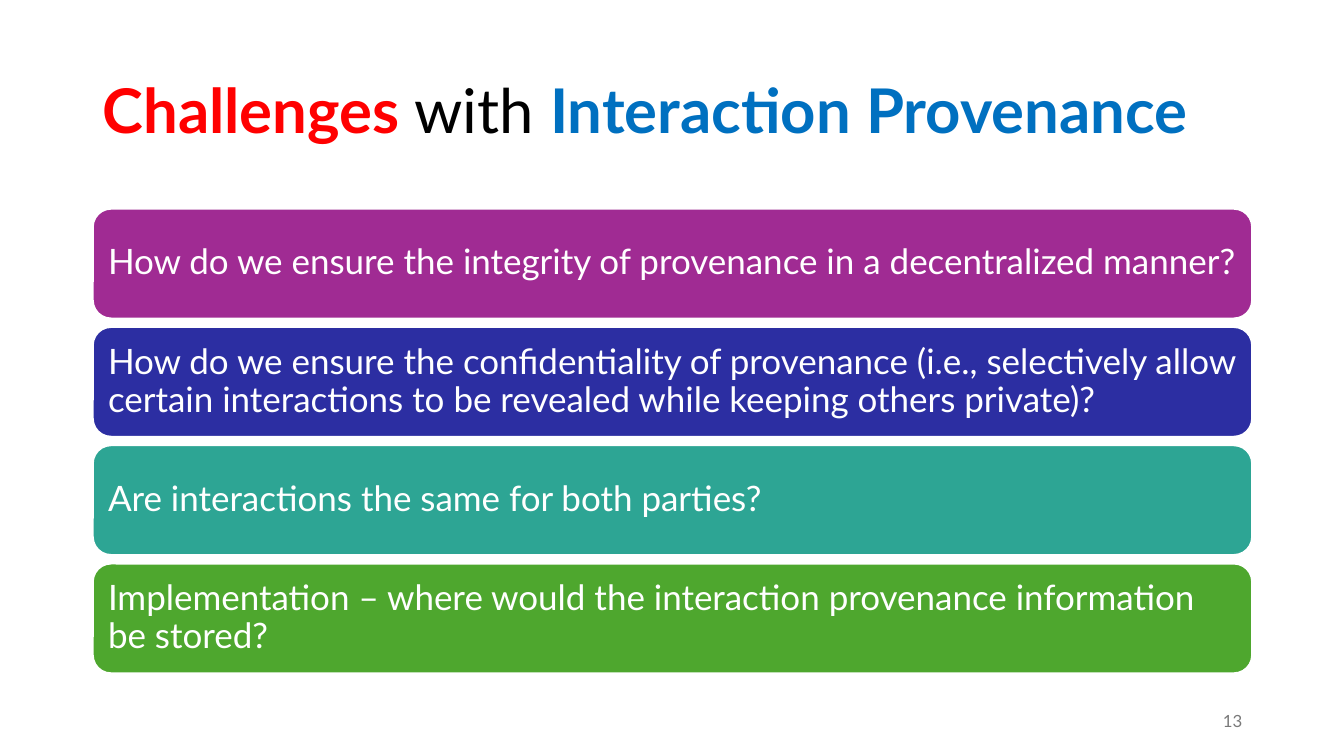
from pptx import Presentation
from pptx.dml.color import RGBColor
from pptx.enum.shapes import MSO_SHAPE
from pptx.enum.text import MSO_ANCHOR, PP_ALIGN
from pptx.util import Inches, Pt

WHITE = RGBColor(0xFF, 0xFF, 0xFF)
BLACK = RGBColor(0x00, 0x00, 0x00)
RED = RGBColor(0xFF, 0x00, 0x00)
BLUE = RGBColor(0x00, 0x70, 0xC0)
GRAY = RGBColor(0x79, 0x79, 0x79)
PURPLE = RGBColor(0xA0, 0x2B, 0x93)
INDIGO = RGBColor(0x2C, 0x2E, 0xA2)
TEAL = RGBColor(0x2D, 0xA5, 0x94)
GREEN = RGBColor(0x4E, 0xA7, 0x2E)
FONT = "Lato"

TITLE = [
    ("Challenges", RED, True),
    (" with ", BLACK, False),
    ("Interaction Provenance", BLUE, True),
]
CHALLENGES = [
    ("How do we ensure the integrity of provenance in a decentralized manner?", PURPLE),
    ("How do we ensure the confidentiality of provenance (i.e., selectively allow "
     "certain interactions to be revealed while keeping others private)?", INDIGO),
    ("Are interactions the same for both parties?", TEAL),
    ("Implementation – where would the interaction provenance information be stored?", GREEN),
]
PAGE_NUMBER = "13"

LEFT, WIDTH = 0.92, 11.5
FIRST_TOP, LAST_TOP, BAR_HEIGHT = 2.07, 5.59, 1.09
PITCH = (LAST_TOP - FIRST_TOP) / (len(CHALLENGES) - 1)


def prepare_text(box, size):
    frame = box.text_frame
    frame.word_wrap = True
    frame.vertical_anchor = MSO_ANCHOR.MIDDLE
    para = frame.paragraphs[0]
    para.font.name = FONT
    para.font.size = Pt(size)
    return para


def add_text_box(page, left, top, width, height, size):
    box = page.shapes.add_textbox(Inches(left), Inches(top), Inches(width), Inches(height))
    return prepare_text(box, size)


def add_title(page):
    para = add_text_box(page, LEFT, 0.4, WIDTH, 1.45, 44)
    para.line_spacing = 0.9
    for text, color, bold in TITLE:
        span = para.add_run()
        span.text = text
        span.font.color.rgb = color
        span.font.bold = bold


def add_challenge(page, top, text, color):
    bar = page.shapes.add_shape(MSO_SHAPE.ROUNDED_RECTANGLE, Inches(LEFT), Inches(top),
                                Inches(WIDTH), Inches(BAR_HEIGHT))
    bar.shadow.inherit = False
    bar.fill.solid()
    bar.fill.fore_color.rgb = color
    bar.line.color.rgb = WHITE
    bar.line.width = Pt(1.5)
    frame = bar.text_frame
    frame.margin_left = frame.margin_right = Inches(0.1)
    frame.margin_top = frame.margin_bottom = Inches(0.1)
    para = prepare_text(bar, 25)
    para.text = text
    para.alignment = PP_ALIGN.LEFT
    para.line_spacing = 0.9
    para.font.color.rgb = WHITE


def add_page_number(page):
    para = add_text_box(page, 9.42, 6.95, 3, 0.4, 12)
    para.text = PAGE_NUMBER
    para.alignment = PP_ALIGN.RIGHT
    para.font.color.rgb = GRAY


def main():
    deck = Presentation()
    deck.slide_width, deck.slide_height = Inches(13.33), Inches(7.5)
    page = deck.slides.add_slide(deck.slide_layouts[6])
    add_title(page)
    for index, (text, color) in enumerate(CHALLENGES):
        add_challenge(page, FIRST_TOP + index * PITCH, text, color)
    add_page_number(page)
    deck.save("out.pptx")


if __name__ == "__main__":
    main()
